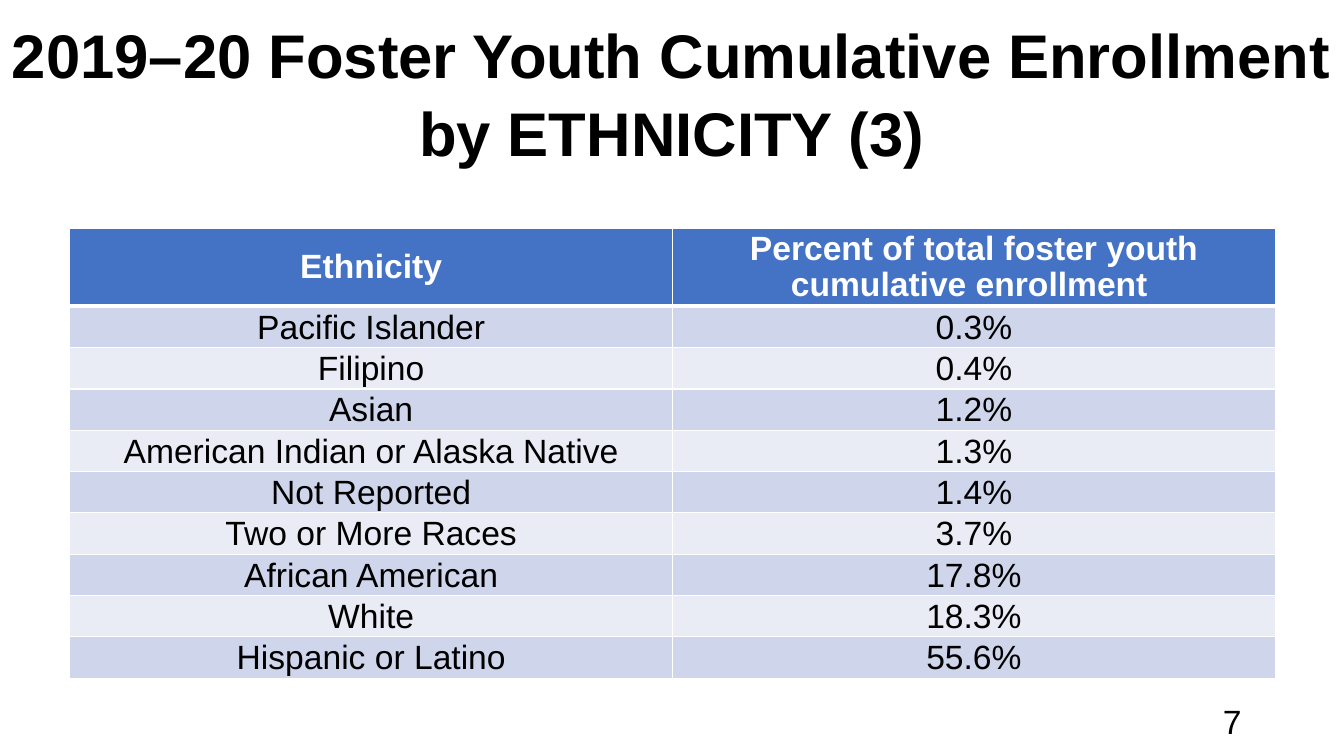
from lxml.etree import SubElement
from pptx import Presentation
from pptx.dml.color import RGBColor
from pptx.enum.text import MSO_ANCHOR, MSO_AUTO_SIZE, PP_ALIGN
from pptx.oxml.ns import qn
from pptx.util import Pt


def style(para, size, color, align, bold=False):
    para.alignment = align
    para.font.name = "Arial"
    para.font.size = Pt(size)
    para.font.bold = bold
    para.font.color.rgb = RGBColor.from_string(color)


def add_border(cell, side, width, color):
    line = SubElement(cell._tc.get_or_add_tcPr(), qn(f"a:ln{side}"), w=str(Pt(width)))
    fill = SubElement(line, qn("a:solidFill"))
    SubElement(fill, qn("a:srgbClr"), val=color)


deck = Presentation()
deck.slide_width = Pt(960)
deck.slide_height = Pt(540)
page = deck.slides.add_slide(deck.slide_layouts[5])

title = page.shapes.title
title.left, title.top, title.width, title.height = Pt(0), Pt(0), Pt(960), Pt(129.6)
frame = title.text_frame
frame.text = "2019–20 Foster Youth Cumulative Enrollment by ETHNICITY (3)"
frame.word_wrap = True
frame.auto_size = MSO_AUTO_SIZE.NONE
frame.vertical_anchor = MSO_ANCHOR.MIDDLE
frame.margin_left = frame.margin_right = Pt(0)
para = frame.paragraphs[0]
style(para, 44, "000000", PP_ALIGN.CENTER, bold=True)
para.line_spacing = 1.05

number_box = page.shapes.add_textbox(Pt(678), Pt(500.4), Pt(216), Pt(28.8))
frame = number_box.text_frame
frame.text = "7"
frame.word_wrap = True
frame.vertical_anchor = MSO_ANCHOR.MIDDLE
style(frame.paragraphs[0], 24, "000000", PP_ALIGN.RIGHT)

rows = [
    ("Ethnicity", "Percent of total foster youth cumulative enrollment "),
    ("Pacific Islander", "0.3%"),
    ("Filipino", "0.4%"),
    ("Asian", "1.2%"),
    ("American Indian or Alaska Native", "1.3%"),
    ("Not Reported", "1.4%"),
    ("Two or More Races", "3.7%"),
    ("African American", "17.8%"),
    ("White", "18.3%"),
    ("Hispanic or Latino", "55.6%"),
]
header_height, row_height = 54, 29.2
table_height = header_height + row_height * (len(rows) - 1)
table = page.shapes.add_table(
    len(rows), 2, Pt(49.8), Pt(163.4), Pt(861.2), Pt(table_height)
).table
for column in table.columns:
    column.width = Pt(430.6)

for row_index, values in enumerate(rows):
    is_header = row_index == 0
    table.rows[row_index].height = Pt(header_height if is_header else row_height)
    if is_header:
        fill_color, text_color = "4472C4", "FFFFFF"
    else:
        fill_color, text_color = ("E9EBF5", "CFD5EA")[row_index % 2], "000000"
    for column_index, value in enumerate(values):
        cell = table.cell(row_index, column_index)
        cell.text = value
        cell.vertical_anchor = MSO_ANCHOR.MIDDLE
        cell.margin_left = cell.margin_right = cell.margin_top = Pt(0.7)
        cell.margin_bottom = Pt(0)
        para = cell.text_frame.paragraphs[0]
        style(para, 24, text_color, PP_ALIGN.CENTER, bold=is_header)
        if is_header:
            para.line_spacing = 0.95
        top_width = 3 if row_index == 1 else 1
        bottom_width = 3 if is_header else 1
        for side, width in (("L", 1), ("R", 1), ("T", top_width), ("B", bottom_width)):
            add_border(cell, side, width, "FFFFFF")
        cell.fill.solid()
        cell.fill.fore_color.rgb = RGBColor.from_string(fill_color)

deck.save("out.pptx")
